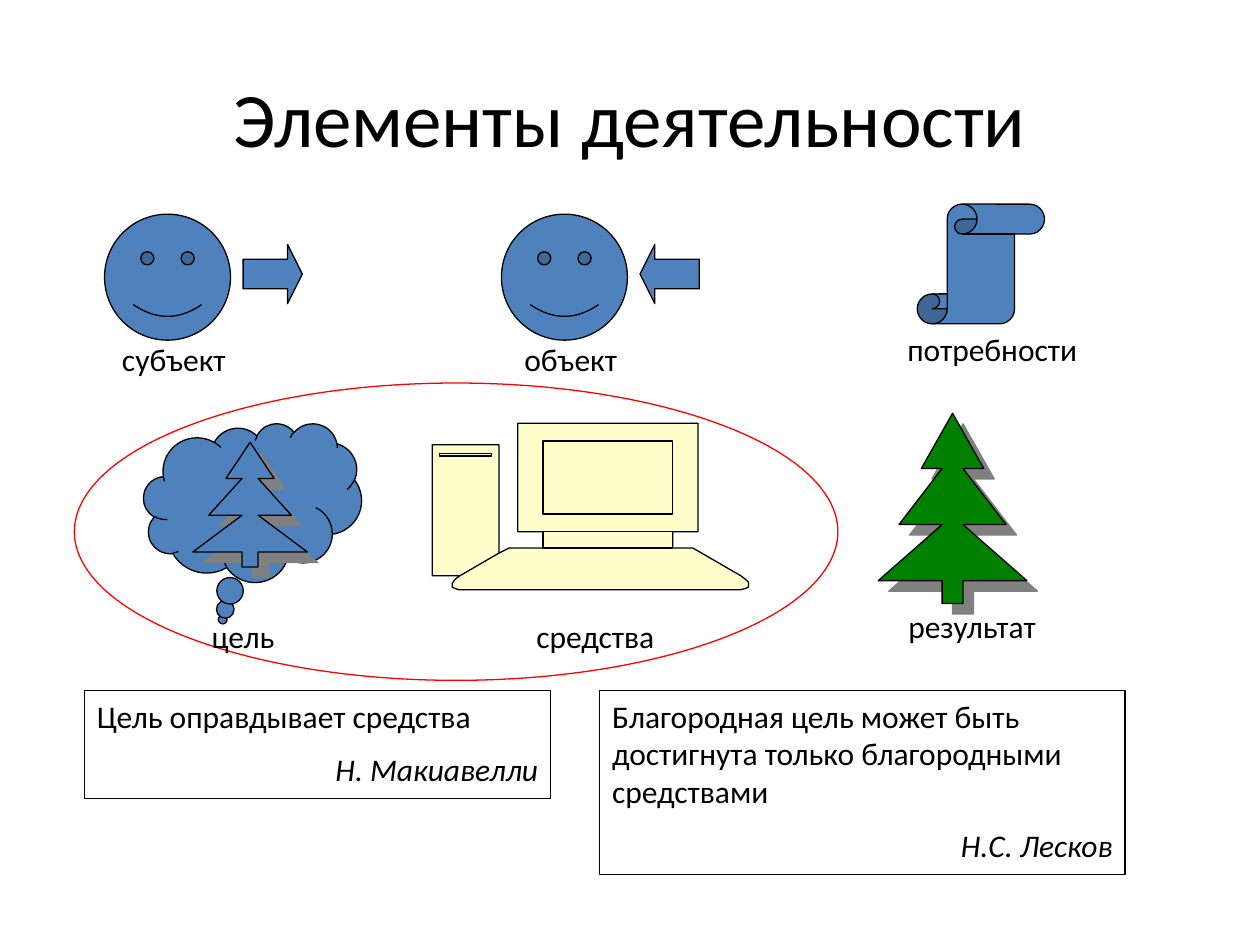
from lxml.etree import SubElement
from pptx import Presentation
from pptx.dml.color import RGBColor
from pptx.enum.shapes import MSO_SHAPE
from pptx.enum.text import MSO_ANCHOR, PP_ALIGN
from pptx.oxml.ns import qn
from pptx.util import Inches, Pt

COLORS = {
    "white": "FFFFFF", "black": "000000", "red": "FF0000", "blue": "4F81BD",
    "green": "008000", "cream": "FFFFCC", "shadow": "808080",
}


def paint(shape, fill, line="black"):
    shape.shadow.inherit = False
    if fill:
        shape.fill.solid()
        shape.fill.fore_color.rgb = RGBColor.from_string(COLORS[fill])
    else:
        shape.fill.background()
    shape.line.color.rgb = RGBColor.from_string(COLORS[line])
    shape.line.width = Pt(0.75)


def write(shape, lines, size=18, align=PP_ALIGN.CENTER, anchor=MSO_ANCHOR.TOP):
    """Put one paragraph per line; a second line is a right-aligned author."""
    frame = shape.text_frame
    frame.word_wrap = True
    frame.vertical_anchor = anchor
    frame.text = "\n".join(lines)
    for index, paragraph in enumerate(frame.paragraphs):
        paragraph.alignment = PP_ALIGN.RIGHT if index else align
        paragraph.space_before = Pt(9 if index else 0)
        font = paragraph.runs[0].font
        font.name = "Calibri"
        font.size = Pt(size)
        font.italic = index > 0
        font.color.rgb = RGBColor.from_string(COLORS["black"])


prs = Presentation()
prs.slide_width, prs.slide_height = Inches(10), Inches(7.5)
shapes = prs.slides.add_slide(prs.slide_layouts[6]).shapes

goal_means_ring = shapes.add_shape(
    MSO_SHAPE.OVAL, Inches(0.59), Inches(3.04), Inches(6.06), Inches(2.36))
paint(goal_means_ring, "white", "red")

title = shapes.add_textbox(Inches(0.5), Inches(0.3), Inches(9), Inches(1.25))
write(title, ["Элементы деятельности"], size=44, anchor=MSO_ANCHOR.MIDDLE)

# Preset, left, top, width, height, adjustments
symbols = [
    (MSO_SHAPE.SMILEY_FACE, 0.83, 1.7, 1, 1, [0.047]),
    (MSO_SHAPE.RIGHT_ARROW, 1.93, 1.94, 0.47, 0.47, [0.5, 0.25]),
    (MSO_SHAPE.SMILEY_FACE, 3.98, 1.7, 1, 1, [0.047]),
    (MSO_SHAPE.LEFT_ARROW, 5.08, 1.94, 0.47, 0.47, [0.5, 0.25]),
    (MSO_SHAPE.VERTICAL_SCROLL, 7.28, 1.62, 1.01, 0.95, [0.25]),
    (MSO_SHAPE.CLOUD_CALLOUT, 1.14, 3.36, 1.73, 1.26, [-0.137, 0.736]),
]
for preset, left, top, width, height, adjustments in symbols:
    symbol = shapes.add_shape(
        preset, Inches(left), Inches(top), Inches(width), Inches(height))
    paint(symbol, "blue")
    for index, value in enumerate(adjustments):
        symbol.adjustments[index] = value

labels = [
    ("субъект", 0.75, 2.65, 1.26), ("объект", 3.9, 2.65, 1.26),
    ("потребности", 6.97, 2.57, 1.81), ("цель", 1.38, 4.85, 1.1),
    ("средства", 3.9, 4.85, 1.65), ("результат", 6.89, 4.77, 1.65),
]
for text, left, top, width in labels:
    label = shapes.add_textbox(
        Inches(left), Inches(top), Inches(width), Inches(0.4))
    write(label, [text])

# Right half of a fir tree: distance from the axis and depth, as shares of its size
half_tree = [
    (0, 0), (0.21, 0.29), (0.07, 0.29), (0.36, 0.585), (0.07, 0.585),
    (0.5, 0.88), (0.07, 0.88), (0.07, 1),
]
tree_outline = half_tree + [(-x, y) for x, y in reversed(half_tree[1:])]
for left, top, width, height, color in [
    (1.53, 3.51, 0.91, 0.99, "blue"),
    (6.97, 3.28, 1.18, 1.51, "green"),
]:
    points = [(Inches(left + width * (0.5 + x)), Inches(top + height * y))
              for x, y in tree_outline]
    builder = shapes.build_freeform(*points[0])
    builder.add_line_segments(points[1:], close=True)
    tree = builder.convert_to_shape()
    paint(tree, color)
    effects = tree._element.spPr.find(qn("a:effectLst"))
    shadow = SubElement(effects, qn("a:outerShdw"), blurRad="0",
                        dist=str(Pt(8.5)), dir=str(45 * 60000),
                        algn="ctr", rotWithShape="0")
    SubElement(shadow, qn("a:srgbClr"), val=COLORS["shadow"])

computer_body = [
    (3.96, 4.39), (4.04, 4.35), (4.31, 4.35), (4.31, 4.22), (4.11, 4.22),
    (4.11, 3.36), (5.54, 3.36), (5.54, 4.22), (5.34, 4.22), (5.34, 4.35),
    (5.5, 4.35), (5.88, 4.57), (5.92, 4.6), (5.94, 4.62), (5.94, 4.66),
    (5.92, 4.67), (5.88, 4.68), (3.64, 4.68), (3.61, 4.67), (3.59, 4.66),
    (3.59, 4.63), (3.61, 4.6), (3.65, 4.57), (3.43, 4.57), (3.43, 3.53),
    (3.96, 3.53), (3.96, 4.39), (3.65, 4.57),
]
points = [(Inches(x), Inches(y)) for x, y in computer_body]
builder = shapes.build_freeform(*points[0])
builder.add_line_segments(points[1:], close=True)
paint(builder.convert_to_shape(), "cream")

# Screen, disk slot and monitor neck
for left, top, width, height in [
    (4.31, 3.5, 1.03, 0.58), (3.49, 3.6, 0.41, 0.02), (4.31, 4.22, 1.03, 0.13),
]:
    computer_part = shapes.add_shape(
        MSO_SHAPE.RECTANGLE, Inches(left), Inches(top), Inches(width), Inches(height))
    paint(computer_part, "cream")

quotes = [
    (0.67, 3.7, 0.86, "Цель оправдывает средства", "Н. Макиавелли"),
    (4.76, 4.17, 1.46,
     "Благородная цель может быть достигнута только благородными средствами",
     "Н.С. Лесков"),
]
for left, width, height, saying, author in quotes:
    quote = shapes.add_shape(
        MSO_SHAPE.RECTANGLE, Inches(left), Inches(5.48), Inches(width), Inches(height))
    paint(quote, None)
    write(quote, [saying, author], align=PP_ALIGN.LEFT)

prs.save("out.pptx")
